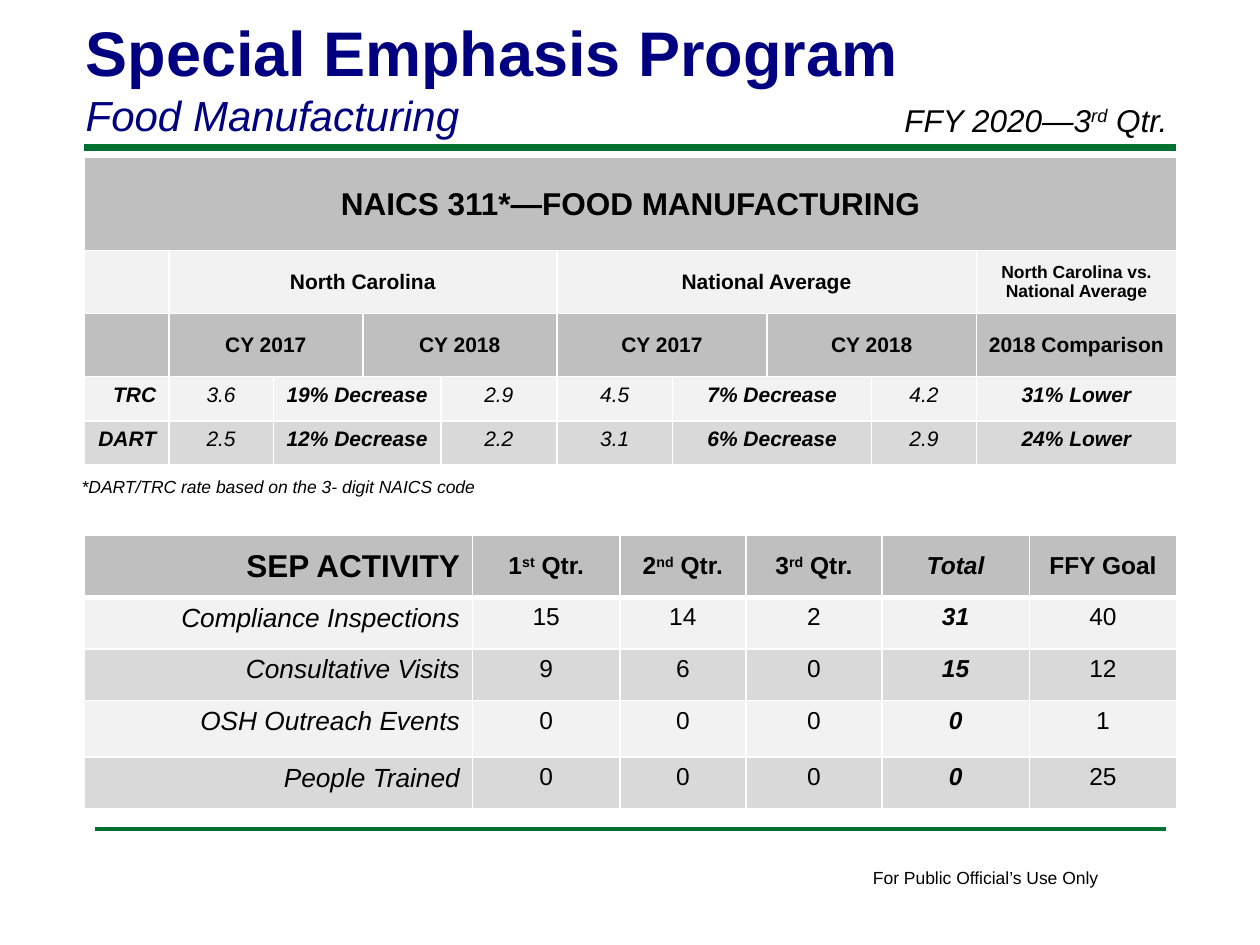
from lxml import etree
from pptx import Presentation
from pptx.dml.color import RGBColor
from pptx.enum import shapes, text
from pptx.oxml import ns
from pptx.util import Inches, Pt

NAVY = RGBColor(0x00, 0x00, 0x80)
GREEN = RGBColor(0x00, 0x70, 0x30)
BLACK = RGBColor(0x00, 0x00, 0x00)
WHITE = RGBColor(0xFF, 0xFF, 0xFF)
HEADER = RGBColor(0xBF, 0xBF, 0xBF)
LIGHT = RGBColor(0xF2, 0xF2, 0xF2)
DARK = RGBColor(0xD9, 0xD9, 0xD9)
LEFT, CENTER, RIGHT = text.PP_ALIGN.LEFT, text.PP_ALIGN.CENTER, text.PP_ALIGN.RIGHT


def write(para, words, size, color=BLACK, align=LEFT, bold=False, italic=False):
    """Write words into a paragraph; parts between ^ marks are superscript."""
    para.alignment = align
    for index, part in enumerate(words.split("^")):
        span = para.add_run()
        span.text = part
        values = {"name": "Arial", "size": Pt(size), "bold": bold, "italic": italic}
        for key, value in values.items():
            setattr(span.font, key, value)
        span.font.color.rgb = color
        if index % 2:
            span._r.get_or_add_rPr().set("baseline", "30000")


def add_grid(page, top, widths, heights, fills, thick_rule=None):
    """Add a table with white rules, one fill per row; thick_rule is the row below a 3 pt rule."""
    frame = page.shapes.add_table(len(heights), len(widths), Inches(0.67), Inches(top),
                                  Inches(sum(widths)), Inches(sum(heights)))
    grid = frame.table
    for column, width in zip(grid.columns, widths):
        column.width = Inches(width)
    for row_index, (row, height, fill) in enumerate(zip(grid.rows, heights, fills)):
        row.height = Inches(height)
        for cell in row.cells:
            properties = cell._tc.get_or_add_tcPr()
            for side in "LRTB":
                edge = row_index + (side == "B")
                thick = side in "TB" and edge == thick_rule
                line = etree.SubElement(properties, ns.qn(f"a:ln{side}"),
                                        w=str(Pt(3 if thick else 1)))
                solid = etree.SubElement(line, ns.qn("a:solidFill"))
                etree.SubElement(solid, ns.qn("a:srgbClr"), val=str(WHITE))
            cell.fill.solid()
            cell.fill.fore_color.rgb = fill
    return grid


deck = Presentation()
deck.slide_width, deck.slide_height = Inches(10), Inches(7.5)
page = deck.slides.add_slide(deck.slide_layouts[5])

# Green rules under the title and above the footer
for start, end, y, weight in [(0.67, 9.33, 1.17, 4), (0.75, 9.25, 6.58, 2)]:
    rule = page.shapes.add_connector(shapes.MSO_CONNECTOR.STRAIGHT, Inches(start),
                                     Inches(y), Inches(end), Inches(y))
    rule.line.color.rgb = GREEN
    rule.line.width = Pt(weight)
    etree.SubElement(rule._element.spPr, ns.qn("a:effectLst"))

# Title with the industry as its second line
title = page.shapes.title
placement = {"left": 0.58, "top": 0.06, "width": 8.25, "height": 1.11}
for key, value in placement.items():
    setattr(title, key, Inches(value))
frame = title.text_frame
frame.auto_size = text.MSO_AUTO_SIZE.NONE
frame.vertical_anchor = text.MSO_ANCHOR.TOP
write(frame.paragraphs[0], "Special Emphasis Program", 36, NAVY, bold=True)
write(frame.add_paragraph(), "Food Manufacturing", 24, NAVY, italic=True)

# Period, footnote and footer
notes = [
    (7.08, 0.75, 2.5, 0.4, "FFY 2020—3^rd^ Qtr.", 18, True, True),
    (0.55, 3.73, 3.39, 0.27, "*DART/TRC rate based on the 3- digit NAICS code", 10, True, False),
    (6.83, 6.83, 2.01, 0.27, "For Public Official’s Use Only", 10, False, False),
]
for left, top, width, height, words, size, italic, wrap in notes:
    box = page.shapes.add_textbox(Inches(left), Inches(top), Inches(width), Inches(height))
    box.text_frame.word_wrap = wrap
    write(box.text_frame.paragraphs[0], words, size, italic=italic)

# Injury rates: each entry is (text, columns spanned)
rate_rows = [
    [("NAICS 311*—FOOD MANUFACTURING", 10)],
    [("", 1), ("North Carolina", 4), ("National Average", 4),
     ("North Carolina vs. National Average", 1)],
    [("", 1), ("CY 2017", 2), ("CY 2018", 2), ("CY 2017", 2), ("CY 2018", 2),
     ("2018 Comparison", 1)],
    [("TRC", 1), ("3.6", 1), ("19% Decrease", 2), ("2.9", 1), ("4.5", 1),
     ("7% Decrease", 2), ("4.2", 1), ("31% Lower", 1)],
    [("DART", 1), ("2.5", 1), ("12% Decrease", 2), ("2.2", 1), ("3.1", 1),
     ("6% Decrease", 2), ("2.9", 1), ("24% Lower", 1)],
]
rates = add_grid(page, 1.25, [0.67, 0.83, 0.71, 0.62, 0.92, 0.92, 0.75, 0.83, 0.83, 1.59],
                 [0.74, 0.5, 0.5, 0.35, 0.35], [HEADER, LIGHT, HEADER, LIGHT, DARK])
for row, entries in enumerate(rate_rows):
    column = 0
    is_data = row > 2
    for words, columns in entries:
        cell = rates.cell(row, column)
        if columns > 1:
            cell.merge(rates.cell(row, column + columns - 1))
        if words:
            size = 18 if row == 0 else 10 if "vs." in words else 12
            is_rate = words[0].isdigit() and "." in words
            write(cell.text_frame.paragraphs[0], words, size,
                  align=RIGHT if is_data and column == 0 else CENTER,
                  bold=not is_rate, italic=is_data)
        if not is_data:
            cell.vertical_anchor = text.MSO_ANCHOR.MIDDLE
        column += columns

# Program activity by quarter
activity_rows = [
    ["SEP ACTIVITY", "1^st^ Qtr.", "2^nd^ Qtr.", "3^rd^ Qtr.", "Total", "FFY Goal"],
    ["Compliance Inspections", "15", "14", "2", "31", "40"],
    ["Consultative Visits", "9", "6", "0", "15", "12"],
    ["OSH Outreach Events", "0", "0", "0", "0", "1"],
    ["People Trained", "0", "0", "0", "0", "25"],
]
activity = add_grid(page, 4.25, [3.08, 1.17, 1, 1.08, 1.17, 1.17],
                    [0.49, 0.41, 0.41, 0.45, 0.41],
                    [HEADER, LIGHT, DARK, LIGHT, DARK], thick_rule=1)
for row, entries in enumerate(activity_rows):
    is_header = row == 0
    for column, words in enumerate(entries):
        cell = activity.cell(row, column)
        is_label, is_total = column == 0, column == 4
        size = (18 if is_header else 15) if is_label else 14
        write(cell.text_frame.paragraphs[0], words, size,
              align=RIGHT if is_label else CENTER, bold=is_header or is_total,
              italic=is_total or (is_label and not is_header))
        if is_header:
            cell.vertical_anchor = text.MSO_ANCHOR.MIDDLE

deck.save("out.pptx")
